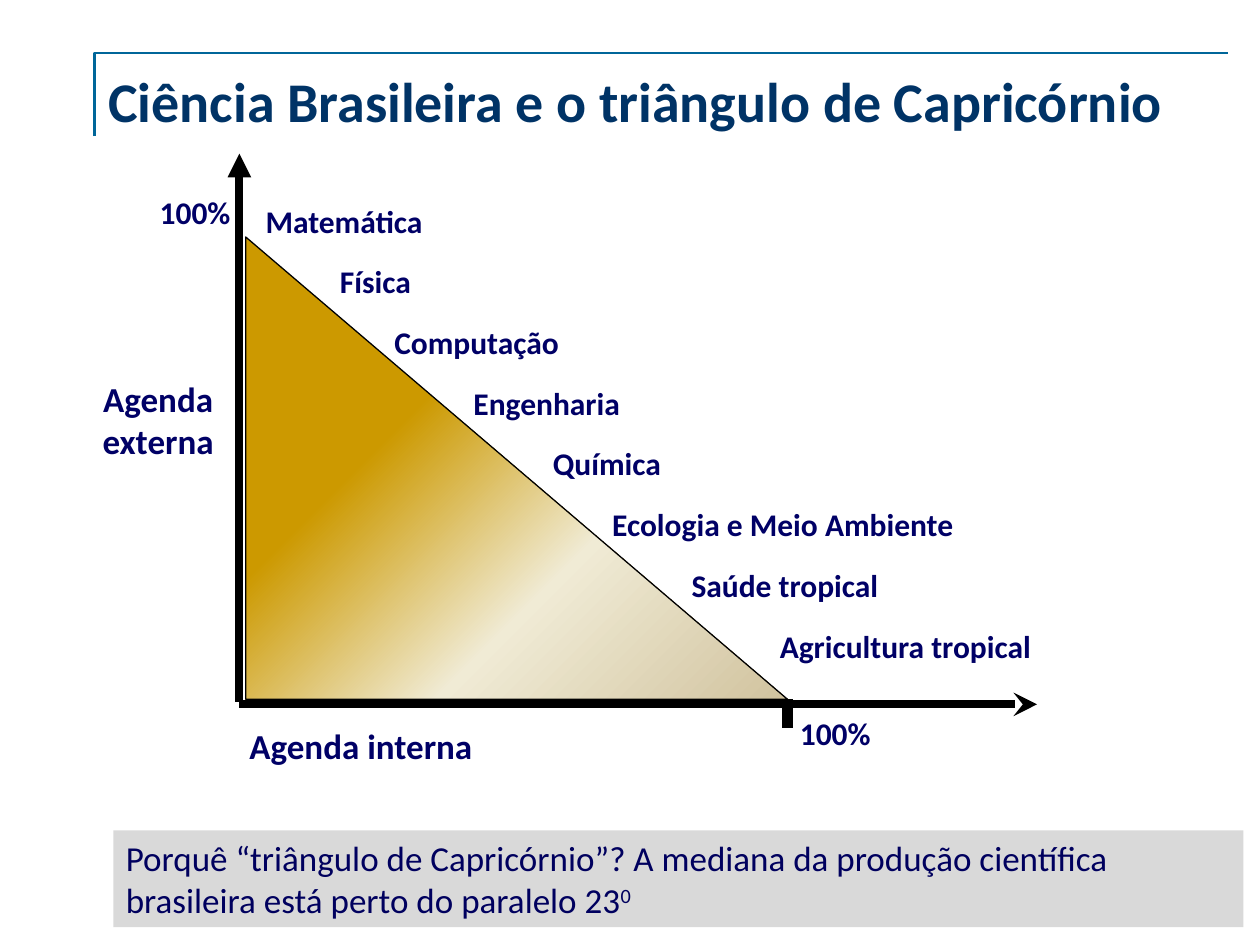
"""Build the slide on Brazilian science and the Capricorn triangle."""
from copy import deepcopy

from pptx import Presentation
from pptx.dml.color import RGBColor
from pptx.enum.shapes import MSO_CONNECTOR, MSO_SHAPE
from pptx.enum.text import MSO_ANCHOR, PP_ALIGN
from pptx.oxml.ns import qn
from pptx.util import Pt
from lxml import etree

STRAIGHT = MSO_CONNECTOR.STRAIGHT
RECTANGLE = MSO_SHAPE.RECTANGLE
RIGHT_TRIANGLE = MSO_SHAPE.RIGHT_TRIANGLE
MIDDLE = MSO_ANCHOR.MIDDLE
LEFT, CENTER = PP_ALIGN.LEFT, PP_ALIGN.CENTER

THEME = {
    "font": "Calibri",
    "frame": RGBColor.from_string("006699"),
    "axis": RGBColor.from_string("000000"),
    "panel": RGBColor.from_string("D9D9D9"),
    "gradient": [(0, "CC9900"), (0.34, "CC9900"), (0.65, "F0EBD5"), (1, "D1C39F")],
    "title": {"size": Pt(32), "bold": True, "color": RGBColor.from_string("003366")},
    "agenda": {"size": Pt(20), "bold": True, "color": RGBColor.from_string("000066")},
    "label": {"size": Pt(18), "bold": True, "color": RGBColor.from_string("000066")},
    "note": {"size": Pt(20), "bold": False, "color": RGBColor.from_string("00005E")},
}


def write_text(shape, lines, style, alignment=LEFT, wrap=True):
    frame = shape.text_frame
    frame.text = "\n".join(lines)
    for name, value in {"word_wrap": wrap, "vertical_anchor": MIDDLE}.items():
        setattr(frame, name, value)
    for paragraph in frame.paragraphs:
        paragraph.alignment = alignment
        for run in paragraph.runs:
            run.font.color.rgb = THEME[style]["color"]
            values = {"name": THEME["font"], "size": THEME[style]["size"], "bold": THEME[style]["bold"]}
            for name, value in values.items():
                setattr(run.font, name, value)


presentation = Presentation()
presentation.slide_width, presentation.slide_height = Pt(720), Pt(540)
slide = presentation.slides.add_slide(presentation.slide_layouts[5])
shapes = slide.shapes

title = shapes.title
for name, value in {"left": 54.7, "top": 27.4, "width": 665.3, "height": 59.8}.items():
    setattr(title, name, Pt(value))
write_text(title, ["Ciência Brasileira e o triângulo de Capricórnio"], "title")

builder = shapes.build_freeform(Pt(54), Pt(77.8))
builder.add_line_segments([(Pt(54), Pt(30.2)), (Pt(702), Pt(30.2))], close=False)
title_frame = builder.convert_to_shape()
title_frame.shadow.inherit = False
title_frame.fill.background()
title_frame.line.color.rgb = THEME["frame"]
title_frame.line.width = Pt(1.5)

triangle = shapes.add_shape(RIGHT_TRIANGLE, Pt(140.4), Pt(135.4), Pt(309.6), Pt(264.2))
triangle.shadow.inherit = False
triangle.line.color.rgb = THEME["axis"]
triangle.line.width = Pt(0.75)
triangle.fill.gradient()
triangle.fill.gradient_angle = 315
stop_list = triangle._element.spPr.find(qn("a:gradFill")).find(qn("a:gsLst"))
for _ in range(len(THEME["gradient"]) - len(stop_list)):
    stop_list.append(deepcopy(stop_list[0]))
for stop, (position, color) in zip(triangle.fill.gradient_stops, THEME["gradient"]):
    stop.position = position
    stop.color.rgb = RGBColor.from_string(color)

axis_lines = [
    ((136.8, 402.5), (592.6, 402.5), 4.5, "stealth"),
    ((136.8, 401), (136.8, 87.8), 4.5, "triangle"),
    ((450, 399.6), (450, 416.2), 6, None),
]
for start, end, width, arrowhead in axis_lines:
    connector = shapes.add_connector(STRAIGHT, *map(Pt, start + end))
    connector.line.color.rgb = THEME["axis"]
    connector.line.width = Pt(width)
    if arrowhead:
        etree.SubElement(connector.line._get_or_add_ln(), qn("a:tailEnd"), type=arrowhead)
    etree.SubElement(connector._element.spPr, qn("a:effectLst"))

FIELDS_TOP, FIELD_STEP, LABEL_HEIGHT = 111.6, 34.7, 28.8
fields = [
    ("Matemática", 144.7, 105),
    ("Física", 187.2, 55.4),
    ("Computação", 218.2, 109.4),
    ("Engenharia", 263.5, 98.6),
    ("Química", 308.9, 77),
    ("Ecologia e Meio Ambiente", 342.7, 211),
    ("Saúde tropical", 388.1, 126),
    ("Agricultura tropical", 438.5, 159),
]
labels = [
    (text, left, FIELDS_TOP + row * FIELD_STEP, width, LABEL_HEIGHT, "label")
    for row, (text, left, width) in enumerate(fields)
]
labels += [
    ("100%", 84.2, 106.6, 55.4, LABEL_HEIGHT, "label"),
    ("100%", 450, 404.6, 55.4, LABEL_HEIGHT, "label"),
    ("Agenda interna", 135.4, 410.4, 147.6, 31.7, "agenda"),
]
for text, left, top, width, height, style in labels:
    box = shapes.add_textbox(Pt(left), Pt(top), Pt(width), Pt(height))
    write_text(box, [text], style, wrap=False)

external_agenda = shapes.add_textbox(Pt(42.5), Pt(212), Pt(95.8), Pt(55))
write_text(external_agenda, ["Agenda", "externa"], "agenda", CENTER)

note = shapes.add_shape(RECTANGLE, Pt(64.8), Pt(474.5), Pt(645.8), Pt(55.4))
note.shadow.inherit = False
note.fill.solid()
note.fill.fore_color.rgb = THEME["panel"]
note.line.fill.background()
write_text(note, [
    "Porquê “triângulo de Capricórnio”? A mediana da produção científica "
    "brasileira está perto do paralelo 23"
], "note")
degree = note.text_frame.paragraphs[0].add_run()
degree.text = "0"
degree.font.name = THEME["font"]
degree.font.size = THEME["note"]["size"]
degree.font.color.rgb = THEME["note"]["color"]
degree.font._element.set("baseline", "30000")

presentation.save("out.pptx")
